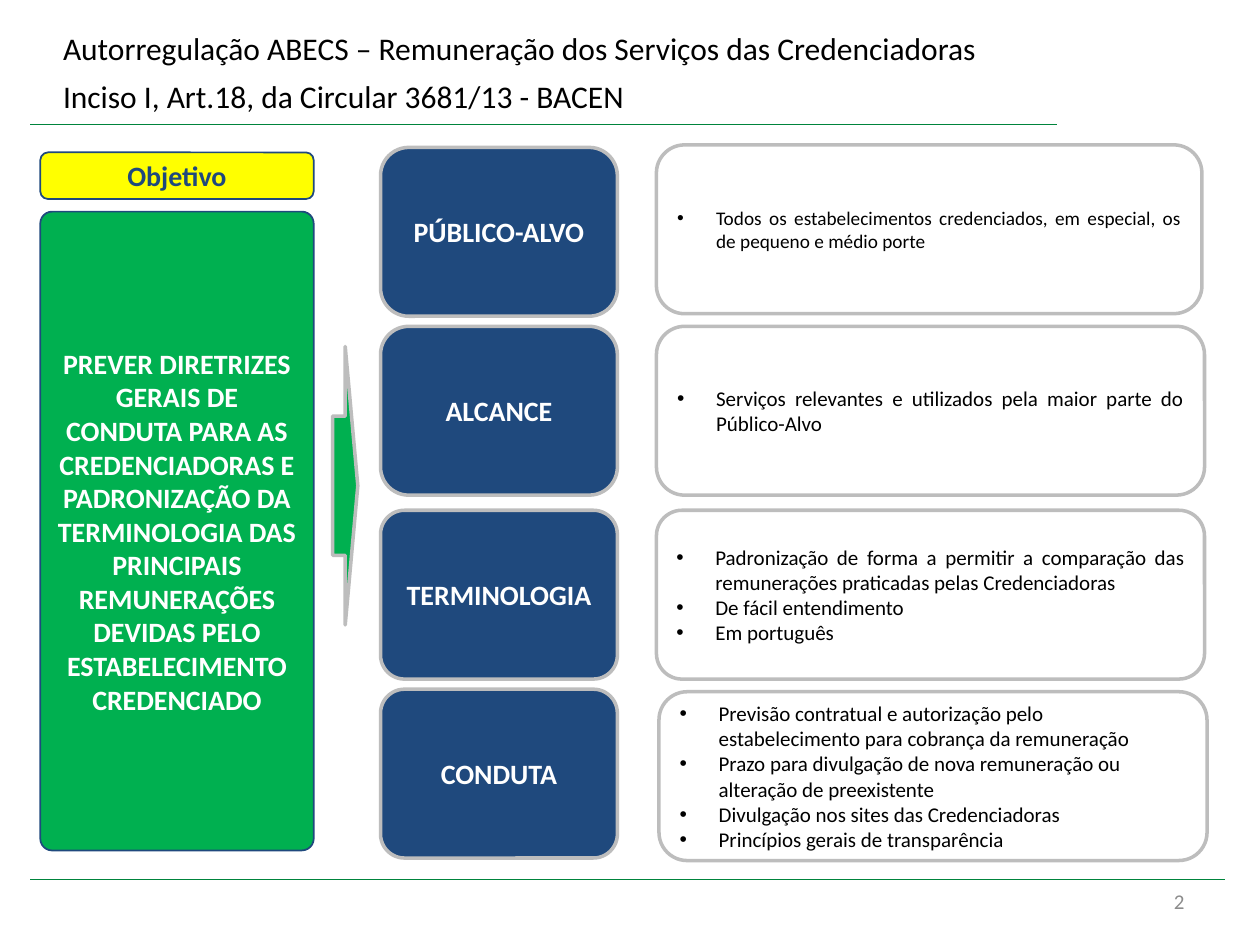
from lxml import etree
from pptx import Presentation
from pptx.dml.color import RGBColor
from pptx.enum.shapes import MSO_CONNECTOR, MSO_SHAPE
from pptx.enum.text import MSO_ANCHOR, PP_ALIGN
from pptx.oxml.ns import qn
from pptx.util import Inches, Pt

ROUND, ARROW = MSO_SHAPE.ROUNDED_RECTANGLE, MSO_SHAPE.RIGHT_ARROW
LINE = MSO_CONNECTOR.STRAIGHT
MIDDLE = MSO_ANCHOR.MIDDLE
LEFT, CENTER = PP_ALIGN.LEFT, PP_ALIGN.CENTER
RIGHT, JUST = PP_ALIGN.RIGHT, PP_ALIGN.JUSTIFY
FONT = "Calibri"
HEX = {
    "navy": "1F497D", "green": "00B050", "yellow": "FFFF00", "rule": "00843C",
    "edge": "BDBDBD", "gray": "8C8C8C", "white": "FFFFFF", "black": "000000",
}
RGB = {name: RGBColor.from_string(code) for name, code in HEX.items()}

prs = Presentation()
prs.slide_width, prs.slide_height = Inches(10), Inches(7.5)
slide = prs.slides.add_slide(prs.slide_layouts[5])
shapes = slide.shapes


def add_box(kind, spot, fill, edge, width, adj=None):
    box = shapes.add_shape(kind, *[Inches(v) for v in spot])
    box.shadow.inherit = False
    if fill:
        box.fill.solid()
        box.fill.fore_color.rgb = RGB[fill]
    else:
        box.fill.background()
    box.line.color.rgb = RGB[edge]
    box.line.width = Pt(width)
    if adj is not None:
        box.adjustments[0] = adj
    box.text_frame.vertical_anchor = MIDDLE
    return box


def add_text(para, text, size, color, align, bold=False):
    para.alignment = align
    run = para.add_run()
    run.text = text
    font = run.font
    font.name, font.size, font.bold = FONT, Pt(size), bold
    font.color.rgb = RGB[color]


# Title
title = shapes.title
title.left, title.top = Inches(0.46), Inches(0.29)
title.width, title.height = Inches(7.88), Inches(0.58)
frame = title.text_frame
frame.word_wrap = True
frame.vertical_anchor = MIDDLE
frame.margin_left = frame.margin_right = Inches(0.04)
frame.margin_top = frame.margin_bottom = Inches(0.04)
head = frame.paragraphs[0]
add_text(head, "Autorregulação ABECS – Remuneração dos Serviços das Credenciadoras",
         18, "black", LEFT)
head.add_line_break()
add_text(head, "Inciso I, Art.18, da Circular 3681/13 - BACEN", 18, "black", LEFT)
add_text(head, " ", 24, "black", LEFT)

# Rules and page number
for end, top in [(8.39, 0.99), (9.72, 6.98)]:
    rule = shapes.add_connector(LINE, Inches(0.24), Inches(top), Inches(end), Inches(top))
    rule.line.color.rgb = RGB["rule"]
    rule.line.width = Pt(0.75)
    etree.SubElement(rule._element.spPr, qn("a:effectLst"))

page = shapes.add_textbox(Inches(7.17), Inches(6.95), Inches(2.33), Inches(0.4))
page.text_frame.word_wrap = True
page.text_frame.vertical_anchor = MIDDLE
add_text(page.text_frame.paragraphs[0], "2", 12, "gray", RIGHT)

# Goal column and arrow
goals = [
    (1.21, 0.37, "yellow", "navy", 0.167, "Objetivo"),
    (1.68, 5.07, "green", "white", 0.043,
     "PREVER DIRETRIZES GERAIS DE CONDUTA PARA AS CREDENCIADORAS E "
     "PADRONIZAÇÃO DA TERMINOLOGIA DAS PRINCIPAIS REMUNERAÇÕES DEVIDAS "
     "PELO ESTABELECIMENTO CREDENCIADO"),
]
for top, high, fill, color, adj, text in goals:
    goal = add_box(ROUND, (0.32, top, 2.17, high), fill, "navy", 1, adj)
    add_text(goal.text_frame.paragraphs[0], text, 16, color, CENTER, True)
add_box(ARROW, (2.64, 2.75, 0.2, 2.21), "green", "edge", 2)

# Topic rows: name, top, corner; then note box, corner, text size, items
rows = [
    ("PÚBLICO-ALVO", 1.17, 0.167, (5.21, 1.15, 4.33, 1.34), 0.167, 11, [
        (JUST, "Todos os estabelecimentos credenciados, em especial, os de "
               "pequeno e médio porte")]),
    ("ALCANCE", 2.59, 0.167, (5.21, 2.59, 4.35, 1.34), 0.167, 12, [
        (JUST, "Serviços relevantes e utilizados pela maior parte do Público-Alvo")]),
    ("TERMINOLOGIA", 4.05, 0.142, (5.21, 4.05, 4.35, 1.34), 0.151, 12, [
        (JUST, "Padronização de forma a permitir a comparação das remunerações "
               "praticadas pelas Credenciadoras"),
        (LEFT, "De fácil entendimento"),
        (LEFT, "Em português")]),
    ("CONDUTA", 5.47, 0.142, (5.23, 5.49, 4.35, 1.34), 0.167, 12, [
        (LEFT, "Previsão contratual e autorização pelo estabelecimento para "
               "cobrança da remuneração"),
        (LEFT, "Prazo para divulgação de nova remuneração ou alteração de preexistente"),
        (LEFT, "Divulgação nos sites das Credenciadoras"),
        (LEFT, "Princípios gerais de transparência")]),
]
for name, top, adj, spot, bend, size, items in rows:
    topic = add_box(ROUND, (3.02, top, 1.88, 1.34), "navy", "edge", 2, adj)
    add_text(topic.text_frame.paragraphs[0], name, 16, "white", CENTER, True)

    note = add_box(ROUND, spot, None, "edge", 2, bend).text_frame
    for i, (align, text) in enumerate(items):
        para = note.add_paragraph() if i else note.paragraphs[0]
        props = para._p.get_or_add_pPr()
        props.set("marL", str(Inches(0.31)))
        props.set("indent", str(-Inches(0.31)))
        etree.SubElement(props, qn("a:buFont"), typeface="Arial")
        etree.SubElement(props, qn("a:buChar"), char="•")
        add_text(para, text, size, "black", align)

prs.save("out.pptx")
